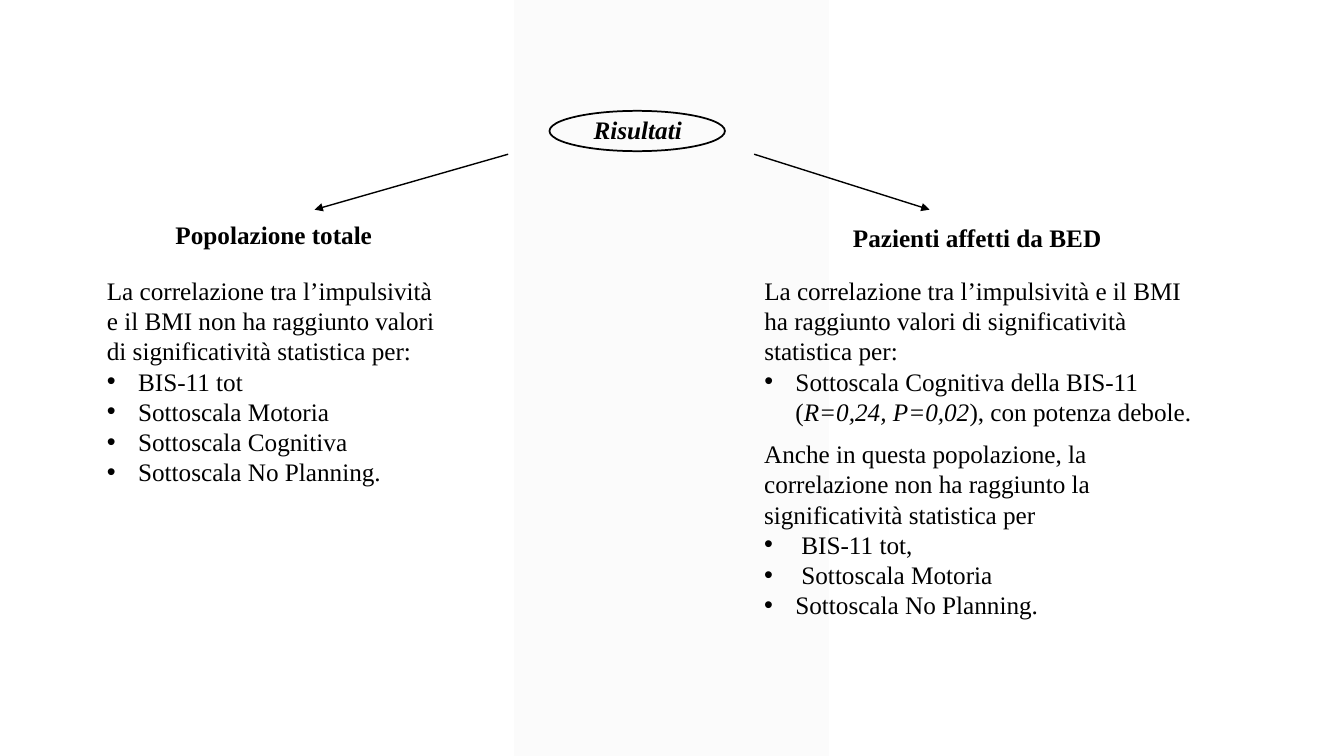
from dataclasses import dataclass

from lxml import etree
from pptx import Presentation
from pptx.dml.color import RGBColor
from pptx.enum.shapes import MSO_CONNECTOR, MSO_SHAPE
from pptx.enum.text import MSO_ANCHOR, MSO_AUTO_SIZE, PP_ALIGN
from pptx.oxml.ns import qn
from pptx.util import Inches, Pt

STRAIGHT = MSO_CONNECTOR.STRAIGHT
PARALLELOGRAM, OVAL = MSO_SHAPE.PARALLELOGRAM, MSO_SHAPE.OVAL
TOP, NO_AUTOFIT = MSO_ANCHOR.TOP, MSO_AUTO_SIZE.NONE
LEFT, CENTER = PP_ALIGN.LEFT, PP_ALIGN.CENTER


@dataclass(frozen=True)
class Theme:
    font: str = "Times New Roman"
    size: Pt = Pt(18)
    ink: RGBColor = RGBColor(0, 0, 0)
    band: RGBColor = RGBColor(0xF2, 0xF2, 0xF2)
    band_alpha: str = "30000"


THEME = Theme()
HANGING, WIDE_HANGING = 0.31, 0.37


def set_text(shape, box, paragraphs, align=LEFT, bold=False, italic=False):
    """Place a shape and fill it with (indent, runs) paragraphs; odd runs are italic."""
    shape.left, shape.top, shape.width, shape.height = map(Inches, box)
    frame = shape.text_frame
    frame.word_wrap = True
    frame.auto_size = NO_AUTOFIT
    frame.vertical_anchor = TOP
    for number, (indent, runs) in enumerate(paragraphs):
        paragraph = frame.paragraphs[0] if number == 0 else frame.add_paragraph()
        properties = paragraph._p.get_or_add_pPr()
        properties.set("marL", str(Inches(indent)))
        properties.set("indent", str(-Inches(indent)))
        if indent:
            etree.SubElement(properties, qn("a:buFont"), typeface="Arial")
            etree.SubElement(properties, qn("a:buChar"), char="•")
        else:
            etree.SubElement(properties, qn("a:buNone"))
        paragraph.alignment = align
        paragraph.line_spacing = 1.0
        paragraph.space_before = Pt(0)
        font = paragraph.font
        font.name, font.size = THEME.font, THEME.size
        font.bold, font.italic = bold, italic
        font.color.rgb = THEME.ink
        for position, text in enumerate(runs):
            run = paragraph.add_run()
            run.text = text
            if position % 2:
                run.font.italic = True


presentation = Presentation()
presentation.slide_width, presentation.slide_height = Inches(13.33), Inches(7.5)
comparison_layout = presentation.slide_layouts[4]
slide = presentation.slides.add_slide(comparison_layout)
shapes = slide.shapes
title, left_heading, left_body, right_heading, right_body = slide.placeholders

# Pale vertical band behind everything
band = shapes.add_shape(PARALLELOGRAM, Inches(5.1), 0, Inches(3.12), Inches(7.5))
band.adjustments[0] = 0
band.shadow.inherit = False
band.fill.solid()
band.fill.fore_color.rgb = THEME.band
band_color = band.fill._xPr.find(qn("a:solidFill"))[0]
etree.SubElement(band_color, qn("a:alpha"), val=THEME.band_alpha)
band.line.fill.background()
shapes._spTree.insert(2, band._element)

# Title in its ellipse
set_text(title, (3.27, 1.08, 6.11, 0.4), [(0, ["Risultati"])], CENTER, True, True)
ellipse = shapes.add_shape(OVAL, Inches(5.45), Inches(1.1), Inches(1.74), Inches(0.4))
ellipse.shadow.inherit = False
ellipse.fill.background()
ellipse.line.color.rgb = THEME.ink
ellipse.line.width = Pt(1.25)

# Arrows to the two populations
for start_x, end_x in ((5.04, 3.12), (7.48, 9.22)):
    arrow = shapes.add_connector(
        STRAIGHT, Inches(start_x), Inches(1.53), Inches(end_x), Inches(2.08))
    arrow.line.color.rgb = THEME.ink
    arrow.line.width = Pt(1)
    etree.SubElement(arrow.line._get_or_add_ln(), qn("a:tailEnd"), type="triangle")
    etree.SubElement(arrow._element.spPr, qn("a:effectLst"))

# Whole population
set_text(left_heading, (1.64, 2.13, 4.16, 0.4), [(0, ["Popolazione totale"])], bold=True)
set_text(left_body, (0.96, 2.68, 3.49, 2.22), [
    (0, ["La correlazione tra l’impulsività e il BMI non ha raggiunto valori "
         "di significatività statistica per:"]),
    (HANGING, ["BIS-11 tot"]),
    (HANGING, ["Sottoscala Motoria"]),
    (HANGING, ["Sottoscala Cognitiva"]),
    (HANGING, ["Sottoscala No Planning."]),
])

# Patients with BED
set_text(right_heading, (8.36, 2.16, 3.6, 0.4), [(0, ["Pazienti affetti da BED"])], bold=True)
set_text(right_body, (7.48, 2.68, 4.55, 1.62), [
    (0, ["La correlazione tra l’impulsività e il BMI ha raggiunto valori "
         "di significatività statistica per:"]),
    (HANGING, ["Sottoscala Cognitiva della BIS-11 (", "R=0,24, P=0,02",
               "), con potenza debole."]),
])
not_significant = shapes.add_textbox(0, 0, 0, 0)
set_text(not_significant, (7.48, 4.3, 4.49, 2.22), [
    (0, ["Anche in questa popolazione, la correlazione non ha raggiunto "
         "la significatività statistica per"]),
    (WIDE_HANGING, ["BIS-11 tot,"]),
    (WIDE_HANGING, ["Sottoscala Motoria"]),
    (HANGING, ["Sottoscala No Planning."]),
])

presentation.save("out.pptx")
